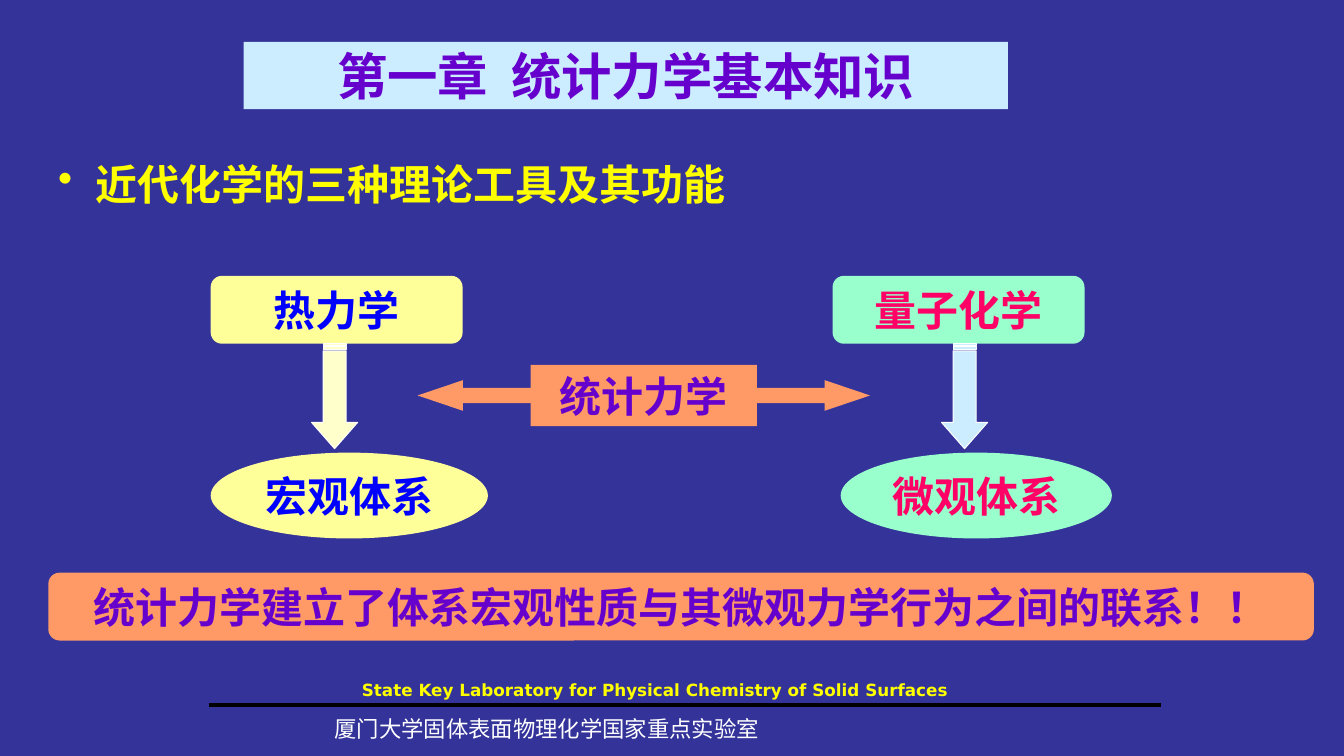
from pptx import Presentation
from pptx import util as u
from pptx.dml import color
from pptx.enum import shapes, text
from pptx.oxml import ns
from lxml import etree

COLORS = {
    "background": "333399", "violet": "6600CC", "blue": "0000FF", "pink": "FF0066",
    "yellow": "FFFF00", "white": "FFFFFF", "black": "000000", "sky": "CCECFF",
    "lemon": "FFFF99", "cream": "FFFFCC", "mint": "99FFCC", "orange": "FF9966",
}
CJK_FONT = "Noto Sans CJK SC"
BODY = {"name": "Times New Roman", "size": u.Pt(30), "bold": True}
HEADING = {"name": CJK_FONT, "size": u.Pt(36), "bold": True}
BULLET = {"name": CJK_FONT, "size": u.Pt(30), "bold": True}
LAB_ENGLISH = {"name": "DejaVu Sans", "size": u.Pt(12), "bold": True}
LAB_CHINESE = {"name": "Times New Roman", "size": u.Pt(16), "bold": False}
CENTER = {"alignment": text.PP_ALIGN.CENTER}
MIDDLE = {"word_wrap": True, "auto_size": text.MSO_AUTO_SIZE.NONE,
          "vertical_anchor": text.MSO_ANCHOR.MIDDLE}
TOP = {**MIDDLE, "vertical_anchor": text.MSO_ANCHOR.TOP}


def rgb(name):
    """Return the named colour."""
    return color.RGBColor.from_string(COLORS[name])


def points(*lengths):
    """Convert numbers to point lengths."""
    return [u.Pt(length) for length in lengths]


def apply(target, values):
    """Set every attribute listed in values on target."""
    for name, value in values.items():
        setattr(target, name, value)


def fill_solid(target, name):
    """Fill a shape or background with one colour."""
    target.fill.solid()
    target.fill.fore_color.rgb = rgb(name)


def write(shape, content, font, ink, frame=MIDDLE, layout=CENTER):
    """Write one formatted paragraph into a shape."""
    apply(shape.text_frame, frame)
    paragraph = shape.text_frame.paragraphs[0]
    apply(paragraph, layout)
    run = paragraph.add_run()
    run.text = content
    apply(run.font, font)
    run.font.color.rgb = rgb(ink)
    east_asian = etree.SubElement(run.font._element, ns.qn("a:ea"))
    east_asian.set("typeface", CJK_FONT)
    return paragraph


def add_block(slide, kind, box, fill, adjustments=()):
    """Add a filled preset shape without outline."""
    shape = slide.shapes.add_shape(kind, *points(*box))
    shape.shadow.inherit = False
    fill_solid(shape, fill)
    shape.line.fill.background()
    for index, value in enumerate(adjustments):
        shape.adjustments[index] = value
    return shape


def add_down_arrow(slide, center, fill):
    """Add a striped arrow turned to point downwards."""
    box = (center - 37.5, 266.5, 75, 33)
    arrow = add_block(slide, shapes.MSO_SHAPE.STRIPED_RIGHT_ARROW, box, fill, (0.5, 0.57))
    arrow.rotation = 90
    arrow.line.color.rgb = rgb("white")
    arrow.line.width = u.Pt(0.75)


def add_label(slide, box, content, font, ink, layout):
    """Add a text box and return its paragraph."""
    return write(slide.shapes.add_textbox(*points(*box)), content, font, ink, TOP, layout)


def add_bullet(paragraph):
    """Give a paragraph a hanging bullet."""
    properties = paragraph._p.get_or_add_pPr()
    properties.set("marL", str(u.Pt(27)))
    properties.set("indent", str(u.Pt(-27)))
    etree.SubElement(properties, ns.qn("a:buChar")).set("char", "•")


def add_footer(slide):
    """Add the laboratory name in two languages around a rule."""
    rule = slide.shapes.add_connector(
        shapes.MSO_CONNECTOR.STRAIGHT, *points(149, 503.5, 829.5, 503.5))
    rule.line.color.rgb = rgb("black")
    rule.line.width = u.Pt(3)
    etree.SubElement(rule._element.spPr, ns.qn("a:effectLst"))
    add_label(slide, (152, 481.7, 632, 21.6),
              "State Key Laboratory for Physical Chemistry of Solid Surfaces",
              LAB_ENGLISH, "yellow", CENTER)
    add_label(slide, (232, 497.5, 435, 36), "厦门大学固体表面物理化学国家重点实验室",
              LAB_CHINESE, "white", {"line_spacing": 1.5})


def add_title(slide):
    """Place and format the title placeholder."""
    title = slide.shapes.title
    title.left, title.top, title.width, title.height = points(174, 30, 546, 48)
    fill_solid(title, "sky")
    write(title, "第一章  统计力学基本知识", HEADING, "violet")


def add_theory(slide, left, oval, arrow_center, names, fills, ink):
    """Add a theory, the system it describes and the arrow between them."""
    theory, system = names
    fill, arrow_fill = fills
    rounded = add_block(slide, shapes.MSO_SHAPE.ROUNDED_RECTANGLE, (left, 197, 180, 48.5), fill)
    write(rounded, theory, BODY, ink)
    oval_left, oval_width = oval
    ellipse = add_block(slide, shapes.MSO_SHAPE.OVAL, (oval_left, 323.3, oval_width, 61.3), fill)
    write(ellipse, system, BODY, ink)
    add_down_arrow(slide, arrow_center, arrow_fill)


def main():
    """Build and save the slide."""
    presentation = Presentation()
    presentation.slide_width, presentation.slide_height = points(960, 540)
    slide = presentation.slides.add_slide(presentation.slide_layouts[5])
    fill_solid(slide.background, "background")
    add_footer(slide)
    add_title(slide)
    add_bullet(add_label(slide, (34.5, 109.5, 914.5, 60), "近代化学的三种理论工具及其功能",
                         BULLET, "yellow", {}))
    add_theory(slide, 150.5, (150.5, 198), 239, ("热力学", "宏观体系"),
               ("lemon", "cream"), "blue")
    add_theory(slide, 594.7, (600.5, 193.7), 689, ("量子化学", "微观体系"),
               ("mint", "sky"), "pink")
    bridge = add_block(slide, shapes.MSO_SHAPE.LEFT_RIGHT_ARROW_CALLOUT,
                       (298.3, 260.6, 323.2, 43.8), "orange", (0.25, 0.25, 0.74, 0.5))
    write(bridge, "统计力学", BODY, "violet")
    conclusion = add_block(slide, shapes.MSO_SHAPE.ROUNDED_RECTANGLE,
                           (34.5, 409, 904, 48.5), "orange")
    write(conclusion, "统计力学建立了体系宏观性质与其微观力学行为之间的联系！！", BODY, "violet")
    presentation.save("out.pptx")


if __name__ == "__main__":
    main()
